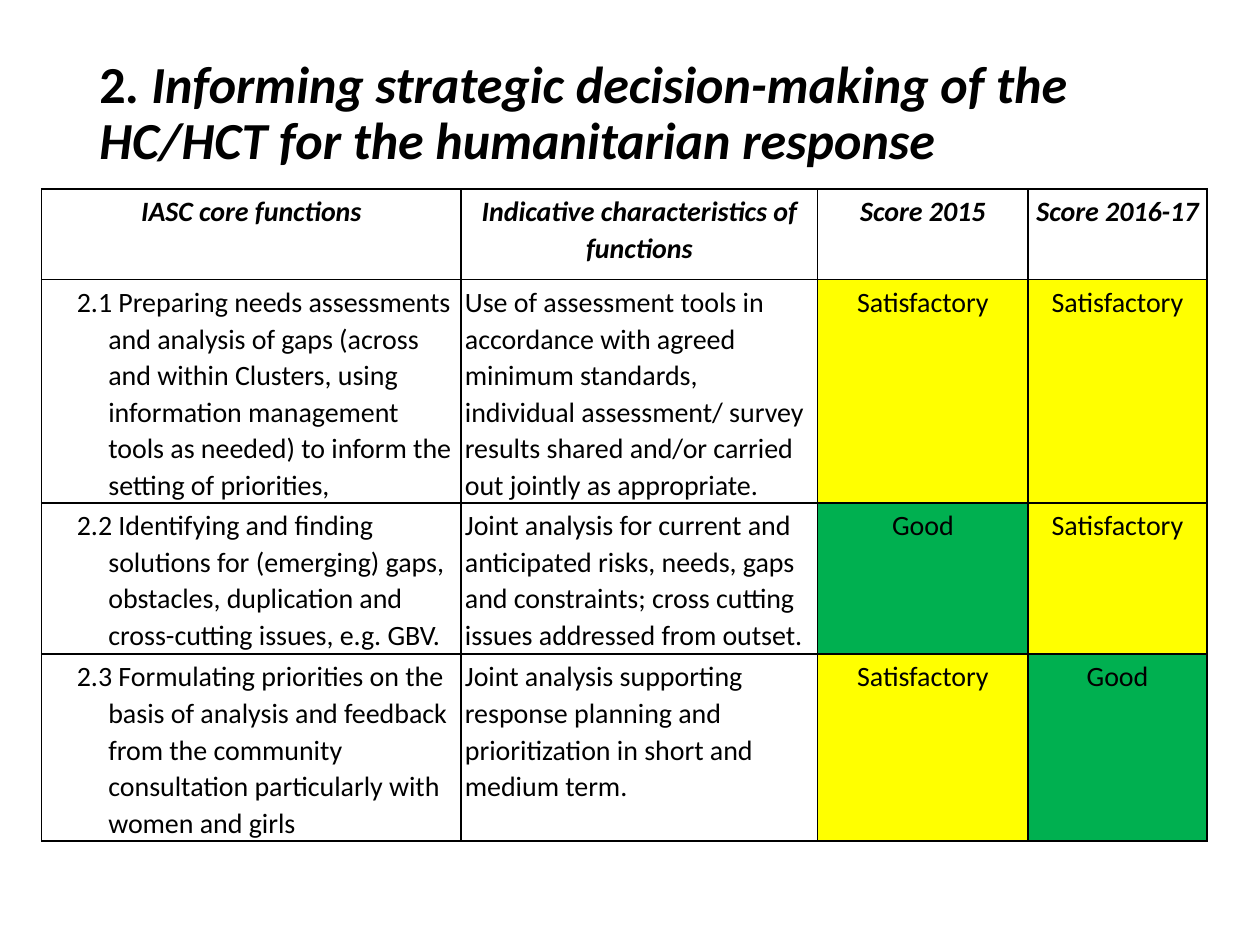
from dataclasses import dataclass

from lxml.etree import SubElement
from pptx import Presentation
from pptx.dml.color import RGBColor
from pptx.enum.text import MSO_ANCHOR, PP_ALIGN
from pptx.oxml.ns import qn
from pptx.util import Inches, Pt

FONT = "Calibri"
COLORS = {"text": "000000", "border": "000000", "Satisfactory": "FFFF00", "Good": "00B050"}
COL_WIDTHS = [3.33, 2.83, 1.67, 1.42]
ROW_HEIGHTS = [0.72, 1.41, 1.14, 0.95]
HEADERS = ["IASC core functions", "Indicative characteristics of functions", "Score 2015", "Score 2016-17"]


@dataclass
class CoreFunction:
    name: str
    characteristics: str
    score_2015: str
    score_2016_17: str


FUNCTIONS = [
    CoreFunction(
        "2.1 Preparing needs assessments and analysis of gaps (across and within Clusters, "
        "using information management tools as needed) to inform the setting of priorities,",
        "Use of assessment tools in accordance with agreed minimum standards, individual "
        "assessment/ survey results shared and/or carried out jointly as appropriate.",
        "Satisfactory", "Satisfactory"),
    CoreFunction(
        "2.2 Identifying and finding solutions for (emerging) gaps, obstacles, duplication "
        "and cross-cutting issues, e.g. GBV.",
        "Joint analysis for current and anticipated risks, needs, gaps and constraints; "
        "cross cutting issues addressed from outset.",
        "Good", "Satisfactory"),
    CoreFunction(
        "2.3 Formulating priorities on the basis of analysis and feedback from the community "
        "consultation particularly with women and girls",
        "Joint analysis supporting response planning and prioritization in short and medium term.",
        "Satisfactory", "Good"),
]


def set_font(font, size: float, bold: bool) -> None:
    font.name = FONT
    font.size = Pt(size)
    font.bold = bold
    font.color.rgb = RGBColor.from_string(COLORS["text"])


def add_title(s) -> None:
    tf = s.shapes.add_textbox(Inches(0.69), Inches(0.4), Inches(8.62), Inches(1.02)).text_frame
    tf.word_wrap = True
    tf.vertical_anchor = MSO_ANCHOR.MIDDLE
    p = tf.paragraphs[0]
    p.line_spacing = 0.9
    set_font(p.font, 29.7, True)
    p.add_run().text = "2"
    r = p.add_run()
    r.text = ". Informing strategic decision-making of the HC/HCT for the humanitarian response"
    r.font.italic = True


def add_borders(cell) -> None:
    tc_pr = cell._tc.get_or_add_tcPr()
    for side in ("a:lnL", "a:lnR", "a:lnT", "a:lnB"):
        ln = SubElement(tc_pr, qn(side), w=str(Pt(1)))
        fill = SubElement(ln, qn("a:solidFill"))
        SubElement(fill, qn("a:srgbClr"), val=COLORS["border"])


def fill_cell(cell, text: str, header: bool, col: int) -> None:
    cell.margin_left = cell.margin_right = Inches(0.03)
    cell.margin_top = cell.margin_bottom = Inches(0.03)
    add_borders(cell)
    if text in ("Satisfactory", "Good"):
        cell.fill.solid()
        cell.fill.fore_color.rgb = RGBColor.from_string(COLORS[text])
    else:
        cell.fill.background()
    p = cell.text_frame.paragraphs[0]
    p.text = text
    p.line_spacing = 1.07
    p.alignment = PP_ALIGN.CENTER if header or col > 1 else PP_ALIGN.LEFT
    if col == 0 and not header:
        p_pr = p._p.get_or_add_pPr()
        p_pr.set("marL", str(Inches(0.5)))
        p_pr.set("indent", str(Inches(-0.25)))
    set_font(p.font, 16, header)
    p.font.italic = header


def add_score_table(s) -> None:
    rows = [HEADERS] + [[f.name, f.characteristics, f.score_2015, f.score_2016_17] for f in FUNCTIONS]
    frame = s.shapes.add_table(len(rows), len(HEADERS), Inches(0.33), Inches(1.5), Inches(9.25), Inches(5.13))
    table = frame.table
    table.horz_banding = False
    for column, width in zip(table.columns, COL_WIDTHS):
        column.width = Inches(width)
    for row, height in zip(table.rows, ROW_HEIGHTS):
        row.height = Inches(height)
    frame.height = Inches(5.13)
    for i, texts in enumerate(rows):
        for j, text in enumerate(texts):
            fill_cell(table.cell(i, j), text, i == 0, j)


def main() -> None:
    prs = Presentation()
    prs.slide_width, prs.slide_height = Inches(10), Inches(7.5)
    s = prs.slides.add_slide(prs.slide_layouts[6])
    add_title(s)
    add_score_table(s)
    prs.save("out.pptx")


if __name__ == "__main__":
    main()
